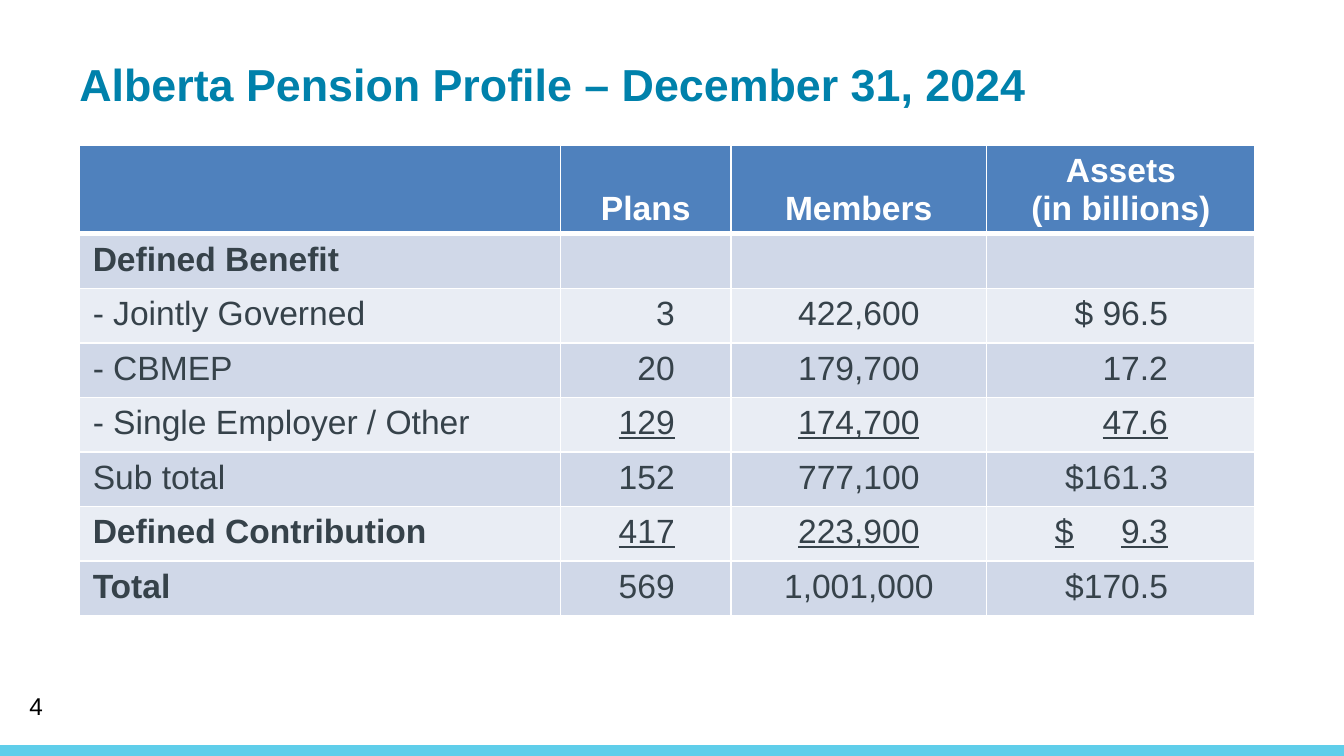
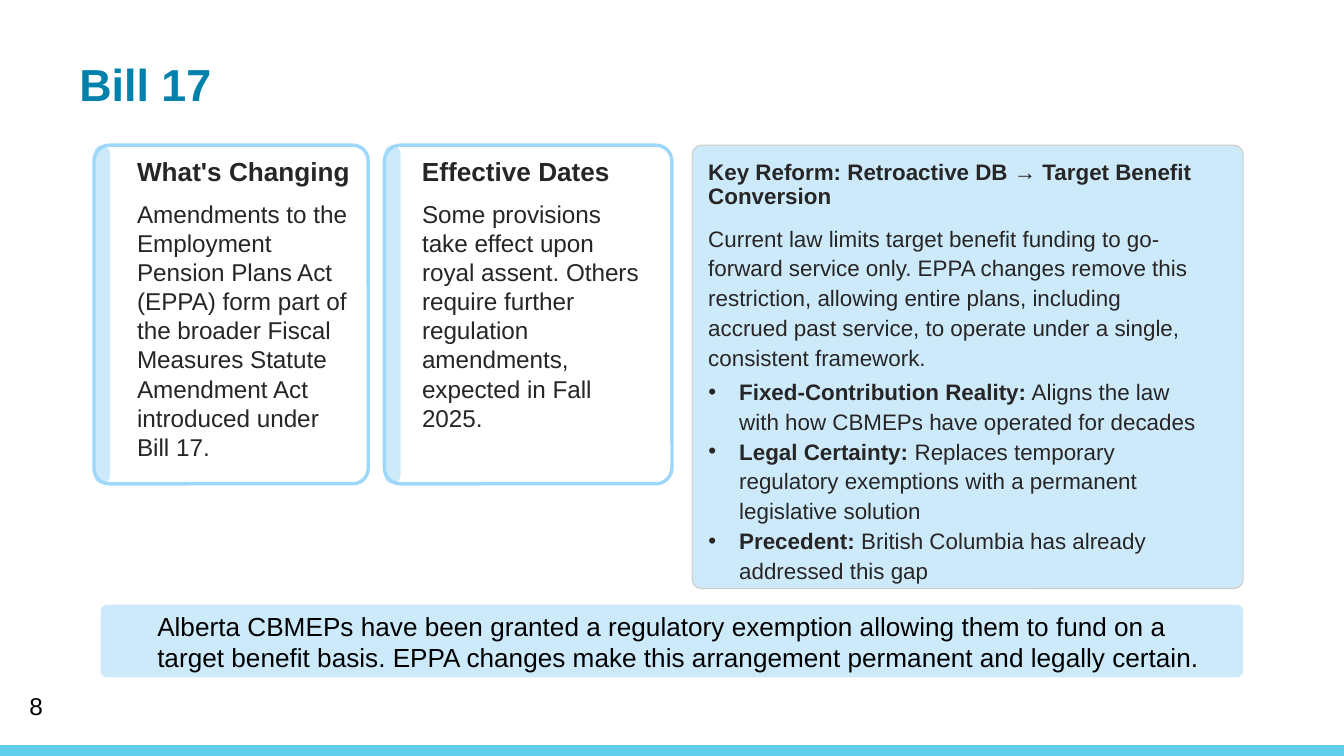
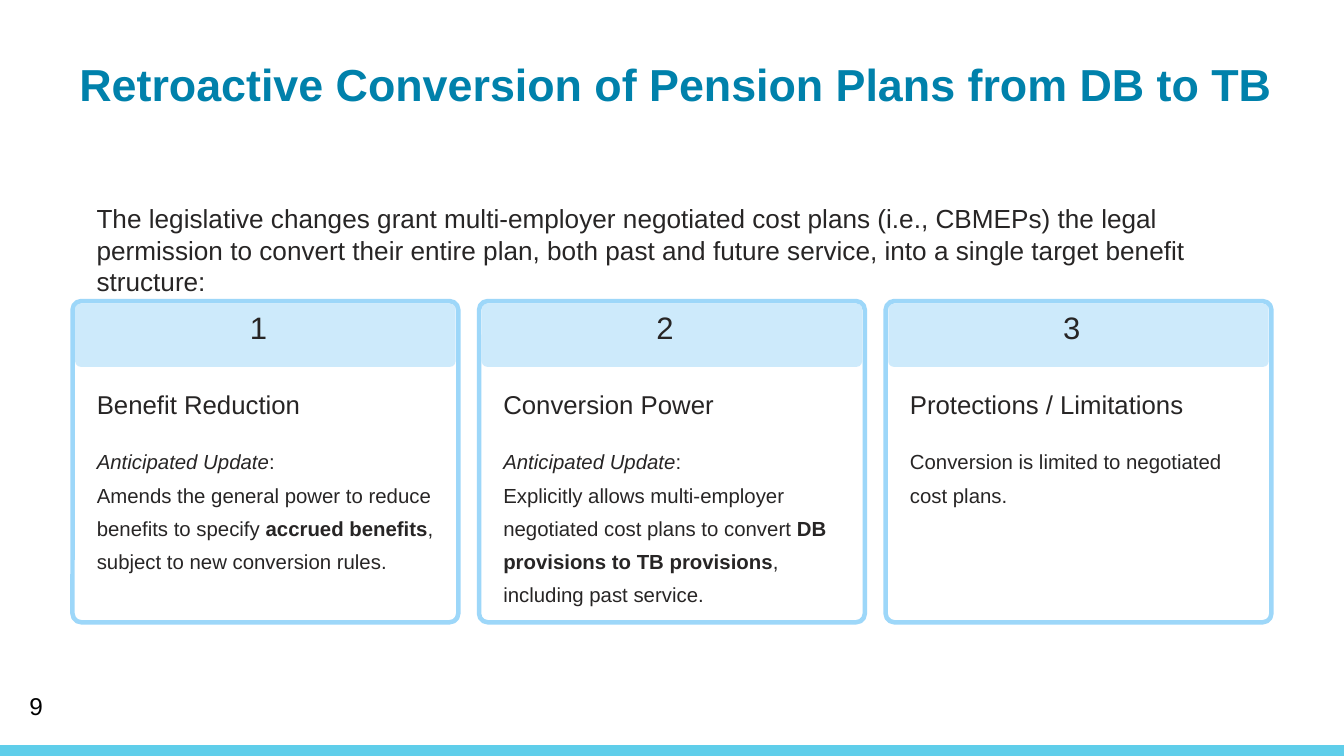
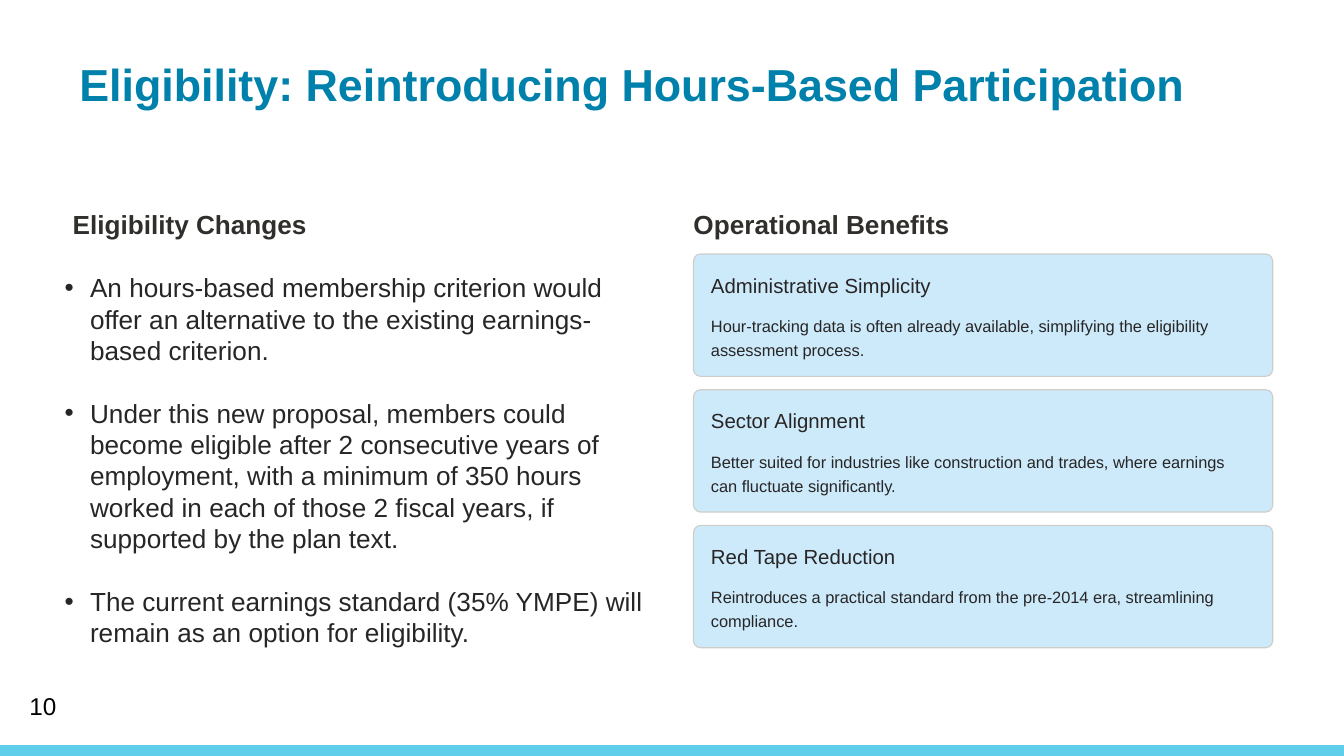
from lxml import etree
from pptx import Presentation
from pptx import util as u
from pptx.dml.color import RGBColor
from pptx.enum import shapes, text
from pptx.oxml.ns import qn

FONT = "Arial"
WIDTH = 10
HEIGHT = WIDTH * 9 / 16
COLORS = {
    "title": "0081AB", "band": "5FCEEA", "black": "000000", "ink": "272525",
    "heading": "312F2B", "sky": "9DD7F9", "white": "FFFFFF", "edge": "CECEC9",
    "table_head": "4F81BD", "row_dark": "D0D8E8", "row_light": "E9EDF4",
    "table_ink": "36424A",
}

PROFILE = {
    "number": 4,
    "title": "Alberta Pension Profile – December 31, 2024",
    "at": (0.59, 1.08, 8.75, 3.5),
    "columns": (3.58, 1.27, 1.9, 2),
    "header": ("", "Plans", "Members", "Assets\n(in billions)"),
    "header_height": 0.66,
    "rows": [
        (("Defined Benefit", "b"), ("", ""), ("", ""), ("", "")),
        (("- Jointly Governed", ""), ("3", ""), ("422,600", ""), ("$ 96.5", "")),
        (("- CBMEP", ""), ("20", ""), ("179,700", ""), ("17.2", "")),
        (("- Single Employer / Other", ""), ("129", "u"), ("174,700", "u"), ("47.6", "u")),
        (("Sub total", ""), ("152", ""), ("777,100", ""), ("$161.3", "")),
        (("Defined Contribution", "b"), ("417", "u"), ("223,900", "u"), ("$\t9.3", "u")),
        (("Total", "b"), ("569", ""), ("1,001,000", ""), ("$170.5", "")),
    ],
    "right_margins": {1: 0.42, 3: 0.65},
    "tab_margin": 0.51,
}

BILL = {
    "number": 8,
    "title": "Bill 17",
    "cards": [
        {"left": 0.7, "width": 2.04, "text_left": 1.02, "text_width": 1.59,
         "heading": "What's Changing",
         "body": "Amendments to the Employment Pension Plans Act (EPPA) form part of the "
                 "broader Fiscal Measures Statute Amendment Act introduced under Bill 17."},
        {"left": 2.86, "width": 2.14, "text_left": 3.14, "text_width": 1.62,
         "heading": "Effective Dates",
         "body": "Some provisions take effect upon royal assent. Others require further "
                 "regulation amendments, expected in Fall 2025."},
    ],
    "reform": "Key Reform: Retroactive DB → Target Benefit Conversion",
    "current_law": "Current law limits target benefit funding to go-forward service only. EPPA "
                   "changes remove this restriction, allowing entire plans, including accrued "
                   "past service, to operate under a single, consistent framework.",
    "reasons": [
        [("Fixed-Contribution Reality:", "b"),
         (" Aligns the law with how CBMEPs have operated for decades", "")],
        [("Legal Certainty:", "b"),
         (" Replaces temporary regulatory exemptions with a permanent legislative solution", "")],
        [("Precedent:", "b"), (" British Columbia has already addressed this gap", "")],
    ],
    "summary": "Alberta CBMEPs have been granted a regulatory exemption allowing them to fund on a "
               "target benefit basis. EPPA changes make this arrangement permanent and legally "
               "certain.",
}

CONVERSION = {
    "number": 9,
    "title": "Retroactive Conversion of Pension Plans from DB to TB",
    "intro": "The legislative changes grant multi-employer negotiated cost plans (i.e., CBMEPs) "
             "the legal permission to convert their entire plan, both past and future service, "
             "into a single target benefit structure:",
    "steps": [
        ("Benefit Reduction", [
            [("Anticipated Update", "i"), (":", "")],
            [("Amends the general power to reduce benefits to specify ", ""),
             ("accrued benefits", "b"), (", subject to new conversion rules.", "")]]),
        ("Conversion Power", [
            [("Anticipated Update", "i"), (":", "")],
            [("Explicitly allows multi-employer negotiated cost plans to convert ", ""),
             ("DB provisions to TB provisions", "b"), (", including past service.", "")]]),
        ("Protections / Limitations", [
            [("Conversion is limited to negotiated cost plans.", "")]]),
    ],
}

ELIGIBILITY = {
    "number": 10,
    "title": "Eligibility: Reintroducing Hours-Based Participation",
    "headings": [(0.54, 2.29, "Eligibility Changes"), (5.16, 1.55, "Operational Benefits")],
    "changes": [
        "An hours-based membership criterion would offer an alternative to the existing "
        "earnings-based criterion.",
        "Under this new proposal, members could become eligible after 2 consecutive years of "
        "employment, with a minimum of 350 hours worked in each of those 2 fiscal years, if "
        "supported by the plan text.",
        "The current earnings standard (35% YMPE) will remain as an option for eligibility.",
    ],
    "benefits": [
        ("Administrative Simplicity", "Hour-tracking data is often already available, "
         "simplifying the eligibility assessment process."),
        ("Sector Alignment", "Better suited for industries like construction and trades, where "
         "earnings can fluctuate significantly."),
        ("Red Tape Reduction", "Reintroduces a practical standard from the pre-2014 era, "
         "streamlining compliance."),
    ],
}


def rgb(name):
    return RGBColor.from_string(COLORS[name])


def inches(at):
    return [u.Inches(length) for length in at]


def plain(words, style=""):
    return [[(words, style)]]


def add_runs(paragraph, runs, size, color):
    for words, style in runs:
        run = paragraph.add_run()
        run.text = words
        font = run.font
        font.name, font.size, font.color.rgb = FONT, u.Pt(size), rgb(color)
        font.bold, font.italic, font.underline = ("b" in style, "i" in style, "u" in style)


def write(frame, paragraphs, size, color="ink", spacing=None, gap=0, indent=0, align=None):
    for index, runs in enumerate(paragraphs):
        paragraph = frame.add_paragraph() if index else frame.paragraphs[0]
        paragraph.space_before = u.Pt(gap if index else 0)
        if spacing:
            paragraph.line_spacing = u.Pt(spacing)
        if align is not None:
            paragraph.alignment = align
        if indent:
            properties = paragraph._p.get_or_add_pPr()
            properties.set("marL", str(u.Inches(indent)))
            properties.set("indent", str(-u.Inches(indent)))
            etree.SubElement(properties, qn("a:buChar")).set("char", "•")
        add_runs(paragraph, runs, size, color)


def set_frame(frame, margins=(0, 0, 0, 0), wrap=True, anchor=text.MSO_ANCHOR.TOP):
    frame.margin_left, frame.margin_top, frame.margin_right, frame.margin_bottom = inches(margins)
    frame.word_wrap = wrap
    frame.auto_size = text.MSO_AUTO_SIZE.NONE
    frame.vertical_anchor = anchor


def add_text(slide, at, paragraphs, size, margins=(0, 0, 0, 0), wrap=True,
             anchor=text.MSO_ANCHOR.TOP, **style):
    frame = slide.shapes.add_textbox(*inches(at)).text_frame
    set_frame(frame, margins, wrap, anchor)
    write(frame, paragraphs, size, **style)


def add_panel(slide, at, fill, radius=None, opacity=100, line=None):
    preset = shapes.MSO_SHAPE.RECTANGLE if radius is None else shapes.MSO_SHAPE.ROUNDED_RECTANGLE
    panel = slide.shapes.add_shape(preset, *inches(at))
    panel.shadow.inherit = False
    if radius is not None:
        panel.adjustments[0] = radius
    panel.fill.solid()
    panel.fill.fore_color.rgb = rgb(fill)
    if opacity < 100:
        color = panel.element.spPr.find(qn("a:solidFill"))[0]
        etree.SubElement(color, qn("a:alpha")).set("val", str(opacity * 1000))
    if line:
        panel.line.color.rgb, panel.line.width = rgb(line[0]), u.Pt(line[1])
    else:
        panel.line.fill.background()


def place(placeholder, at):
    placeholder.left, placeholder.top, placeholder.width, placeholder.height = inches(at)


def fill_list(slide, at, items, size, **style):
    body = slide.placeholders[1]
    place(body, at)
    set_frame(body.text_frame)
    write(body.text_frame, items, size, **style)
    slide.shapes.element.append(body.element)


def new_slide(deck, content, has_list=False):
    slide = deck.slides.add_slide(deck.slide_layouts[1 if has_list else 5])
    add_panel(slide, (0, HEIGHT - 0.08, WIDTH, 0.08), "band")
    add_text(slide, (0.12, 5.1, 2.25, 0.3), plain(str(content["number"])), 13, color="black",
             margins=(0.1, 0.05, 0.1, 0.05), anchor=text.MSO_ANCHOR.MIDDLE)
    title = slide.shapes.title
    place(title, (0.59, 0.37, 8.99, 0.57))
    set_frame(title.text_frame, (0, 0.05, 0.1, 0.05))
    write(title.text_frame, plain(content["title"], "b"), 24, "title", align=text.PP_ALIGN.LEFT)
    return slide


def add_tab_stop(paragraph, position):
    stops = etree.SubElement(paragraph._p.get_or_add_pPr(), qn("a:tabLst"))
    etree.SubElement(stops, qn("a:tab"), pos=str(u.Inches(position)), algn="r")


def style_cell(cell, fill, top=1, bottom=1):
    cell.fill.solid()
    cell.fill.fore_color.rgb = rgb(fill)
    properties = cell._tc.get_or_add_tcPr()
    widths = {"a:lnL": 1, "a:lnR": 1, "a:lnT": top, "a:lnB": bottom}
    for index, (side, width) in enumerate(widths.items()):
        border = etree.Element(qn(side), w=str(u.Pt(width)))
        solid = etree.SubElement(border, qn("a:solidFill"))
        etree.SubElement(solid, qn("a:srgbClr"), val=COLORS["white"])
        properties.insert(index, border)


def build_profile(deck):
    slide = new_slide(deck, PROFILE)
    columns, rows = PROFILE["columns"], PROFILE["rows"]
    table = slide.shapes.add_table(len(rows) + 1, len(columns), *inches(PROFILE["at"])).table
    for column, width in zip(table.columns, columns):
        column.width = u.Inches(width)
    header_height = PROFILE["header_height"]
    row_height = (PROFILE["at"][3] - header_height) / len(rows)
    for index, row in enumerate(table.rows):
        row.height = u.Inches(row_height if index else header_height)

    for column, label in enumerate(PROFILE["header"]):
        cell = table.cell(0, column)
        style_cell(cell, "table_head", bottom=3)
        cell.vertical_anchor = text.MSO_ANCHOR.BOTTOM
        if label:
            write(cell.text_frame, [[(part, "b")] for part in label.split("\n")], 18, "white",
                  align=text.PP_ALIGN.CENTER)

    margins = PROFILE["right_margins"]
    for index, row in enumerate(rows, 1):
        for column, (words, style) in enumerate(row):
            cell = table.cell(index, column)
            style_cell(cell, "row_dark" if index % 2 else "row_light", top=3 if index == 1 else 1)
            if not words:
                continue
            align = text.PP_ALIGN.CENTER if column else text.PP_ALIGN.LEFT
            if "\t" in words:
                left = PROFILE["tab_margin"]
                cell.margin_left = u.Inches(left)
                add_tab_stop(cell.text_frame.paragraphs[0], columns[column] - margins[column] - left)
                align = text.PP_ALIGN.LEFT
            elif column in margins:
                cell.margin_right = u.Inches(margins[column])
                align = text.PP_ALIGN.RIGHT
            write(cell.text_frame, plain(words, style), 18, "table_ink", align=align)


def build_bill(deck):
    slide = new_slide(deck, BILL, has_list=True)
    top, height = 1.08, 2.52
    for card in BILL["cards"]:
        left, text_left = card["left"], card["text_left"]
        add_panel(slide, (left, top, card["width"], height), "white", 0.056, 95, ("sky", 1.8))
        add_panel(slide, (left, top, 0.12, height), "sky", 0.5, 50)
        add_text(slide, (text_left, 1.21, 1.46, 0.18), plain(card["heading"], "b"), 14,
                 wrap=False, spacing=12.8)
        add_text(slide, (text_left, 1.48, card["text_width"], 1.8), plain(card["body"]), 13)
    add_panel(slide, (5.15, top, 4.1, 3.3), "sky", 0.021, 50, ("edge", 0.6))
    add_text(slide, (5.27, 1.2, 3.64, 0.36), plain(BILL["reform"], "b"), 12, spacing=12.8)
    add_text(slide, (5.27, 1.65, 3.64, 0.49), plain(BILL["current_law"]), 12, spacing=16)
    fill_list(slide, (5.27, 2.79, 3.64, 1.04), BILL["reasons"], 12, spacing=16, indent=0.23)
    add_panel(slide, (0.75, 4.5, 8.5, 0.54), "sky", 0.084, 50)
    add_text(slide, (1.17, 4.54, 7.95, 0.2), plain(BILL["summary"]), 14, color="black")


def build_conversion(deck):
    slide = new_slide(deck, CONVERSION)
    add_text(slide, (0.62, 1.46, 9, 0.72), plain(CONVERSION["intro"]), 14,
             margins=(0.1, 0.05, 0.1, 0.05))
    first, width, last = 0.54, 2.87, 6.59
    pitch = (last - first) / (len(CONVERSION["steps"]) - 1)
    for index, (heading, details) in enumerate(CONVERSION["steps"]):
        left = first + index * pitch
        add_panel(slide, (left, 2.24, width, 2.39), "white", 0.027, 95, ("sky", 2.4))
        add_panel(slide, (left + 0.02, 2.26, width - 0.04, 0.47), "sky", 0.086, 50)
        add_text(slide, (left + 1.32, 2.34, 0.23, 0.29), plain(str(index + 1)), 16.6,
                 wrap=False, spacing=16.6)
        add_text(slide, (left + 0.18, 2.88, 2.52, 0.48), plain(heading), 13.8, spacing=17.2)
        add_text(slide, (left + 0.18, 3.28, 2.52, 0.99), details, 10.9, spacing=17.8)


def build_eligibility(deck):
    slide = new_slide(deck, ELIGIBILITY, has_list=True)
    for left, width, heading in ELIGIBILITY["headings"]:
        add_text(slide, (left, 1.59, width, 0.19), plain(heading, "b"), 14, color="heading",
                 wrap=False, spacing=13.8)
    fill_list(slide, (0.48, 2.02, 4.31, 0.71), [[(change, "")] for change in ELIGIBILITY["changes"]],
              14, gap=16.8, indent=0.19)
    for index, (heading, detail) in enumerate(ELIGIBILITY["benefits"]):
        top = 1.89 + index * 1.01
        add_panel(slide, (5.16, top, 4.31, 0.91), "sky", 0.057, 50, ("edge", 0.6))
        add_text(slide, (5.29, top + 0.13, 1.75, 0.19), plain(heading), 10.9, wrap=False,
                 spacing=13.8)
        add_text(slide, (5.29, top + 0.43, 4.05, 0.36), plain(detail), 8.8, spacing=12.8)


def main():
    deck = Presentation()
    deck.slide_width, deck.slide_height = u.Inches(WIDTH), u.Inches(HEIGHT)
    for build in (build_profile, build_bill, build_conversion, build_eligibility):
        build(deck)
    deck.save("out.pptx")


if __name__ == "__main__":
    main()
